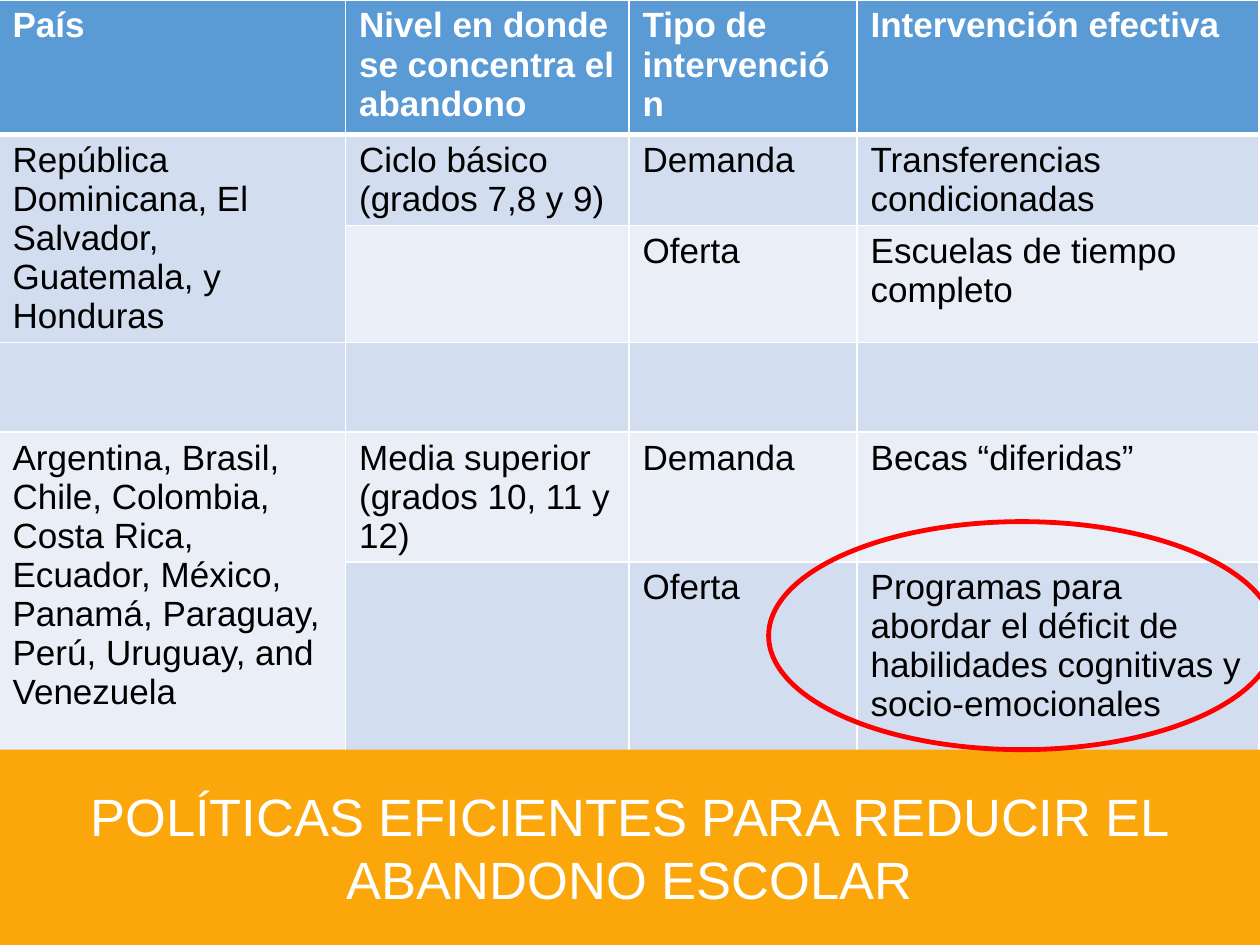
from dataclasses import dataclass

from lxml import etree
from pptx import Presentation
from pptx.dml.color import RGBColor
from pptx.enum.shapes import MSO_SHAPE
from pptx.enum.text import MSO_ANCHOR, MSO_AUTO_SIZE, PP_ALIGN
from pptx.oxml.ns import qn
from pptx.util import Inches, Pt

ELLIPSE = MSO_SHAPE.OVAL
MIDDLE = MSO_ANCHOR.MIDDLE
CENTER = PP_ALIGN.CENTER
NO_FIT = MSO_AUTO_SIZE.NONE
TITLE_ONLY = 5


@dataclass(frozen=True)
class Theme:
    font: str = "Arial"
    white: str = "FFFFFF"
    black: str = "000000"
    header: str = "5B9BD5"
    bands: tuple = ("EAEFF7", "D2DEEF")
    banner: str = "FBA60A"
    accent: str = "FF0000"
    cell_size: float = 20
    title_size: float = 30
    border: float = 1
    header_rule: float = 3
    ring: float = 2.75


@dataclass(frozen=True)
class Box:
    left: float
    top: float
    width: float
    height: float

    def emu(self) -> tuple:
        return tuple(Inches(v) for v in (self.left, self.top, self.width, self.height))


@dataclass(frozen=True)
class Entry:
    row: int
    col: int
    text: str
    rows: int = 1


THEME = Theme()
W, H = 10, 7.5
COLS = (2.75, 2.25, 1.81, 3.19)
ROWS = (1.07,) + (0.71,) * 4 + (1.66,) * 2
TABLE = Box(-0.01, 0, sum(COLS), sum(ROWS))
BANNER = Box(0, 5.95, W, H - 5.95)
RING = Box(6.1, 4.14, 4.02, BANNER.top - 4.14)

ENTRIES = (
    Entry(0, 0, "País"),
    Entry(0, 1, "Nivel en donde se concentra el abandono"),
    Entry(0, 2, "Tipo de intervención"),
    Entry(0, 3, "Intervención efectiva"),
    Entry(1, 0, "República Dominicana, El Salvador, Guatemala, y Honduras", 2),
    Entry(1, 1, "Ciclo básico (grados 7,8 y 9)"),
    Entry(1, 2, "Demanda"),
    Entry(1, 3, "Transferencias condicionadas"),
    Entry(2, 2, "Oferta"),
    Entry(2, 3, "Escuelas de tiempo completo"),
    Entry(4, 0, "Argentina, Brasil,\nChile, Colombia,\nCosta Rica, Ecuador, México, "
                "Panamá, Paraguay, Perú, Uruguay, and Venezuela", 2),
    Entry(4, 1, "Media superior (grados 10, 11 y 12)"),
    Entry(4, 2, "Demanda"),
    Entry(4, 3, "Becas “diferidas”"),
    Entry(5, 2, "Oferta"),
    Entry(5, 3, "Programas para abordar el déficit de habilidades cognitivas "
                "y socio-emocionales"),
)


def rgb(value: str) -> RGBColor:
    return RGBColor.from_string(value)


def apply(obj, formats: dict) -> None:
    for name, value in formats.items():
        setattr(obj, name, value)


def paint(sp, color: str) -> None:
    sp.fill.solid()
    sp.fill.fore_color.rgb = rgb(color)


def write(tf, text: str, size: float, color: str, bold: bool = False) -> None:
    tf.text = text
    for p in tf.paragraphs:
        for r in p.runs:
            apply(r.font, {"name": THEME.font, "size": Pt(size), "bold": bold})
            r.font.color.rgb = rgb(color)


def set_borders(cell, is_header: bool) -> None:
    tc_pr = cell._tc.get_or_add_tcPr()
    for i, side in enumerate(("lnL", "lnR", "lnT", "lnB")):
        width = THEME.header_rule if is_header and side == "lnB" else THEME.border
        ln = etree.Element(qn(f"a:{side}"), w=str(Pt(width)))
        fill = etree.SubElement(ln, qn("a:solidFill"))
        etree.SubElement(fill, qn("a:srgbClr"), val=THEME.white)
        tc_pr.insert(i, ln)


def add_policy_table(s) -> None:
    table = s.shapes.add_table(len(ROWS), len(COLS), *TABLE.emu()).table
    for col, width in zip(table.columns, COLS):
        col.width = Inches(width)
    for i, (row, height) in enumerate(zip(table.rows, ROWS)):
        row.height = Inches(height)
        for cell in row.cells:
            paint(cell, THEME.bands[i % 2] if i else THEME.header)
            set_borders(cell, i == 0)
    for e in ENTRIES:
        cell = table.cell(e.row, e.col)
        if e.rows > 1:
            cell.merge(table.cell(e.row + e.rows - 1, e.col))
        is_header = e.row == 0
        apply(cell, {"margin_left": Inches(0.11), "margin_right": Inches(0.11),
                     "margin_top": Inches(0.05), "margin_bottom": Inches(0.05)})
        color = THEME.white if is_header else THEME.black
        write(cell.text_frame, e.text, THEME.cell_size, color, is_header)


def add_banner(s) -> None:
    sp = s.shapes.title
    s.shapes._spTree.append(sp._element)
    apply(sp, dict(zip(("left", "top", "width", "height"), BANNER.emu())))
    paint(sp, THEME.banner)
    tf = sp.text_frame
    apply(tf, {"word_wrap": True, "auto_size": NO_FIT, "vertical_anchor": MIDDLE})
    write(tf, "POLÍTICAS EFICIENTES PARA REDUCIR EL ABANDONO ESCOLAR",
          THEME.title_size, THEME.white)
    tf.paragraphs[0].alignment = CENTER


def add_ring(s) -> None:
    sp = s.shapes.add_shape(ELLIPSE, *RING.emu())
    sp.shadow.inherit = False
    sp.fill.background()
    sp.line.color.rgb = rgb(THEME.accent)
    sp.line.width = Pt(THEME.ring)


def main() -> None:
    prs = Presentation()
    apply(prs, {"slide_width": Inches(W), "slide_height": Inches(H)})
    s = prs.slides.add_slide(prs.slide_layouts[TITLE_ONLY])
    add_policy_table(s)
    add_banner(s)
    add_ring(s)
    prs.save("out.pptx")


if __name__ == "__main__":
    main()
